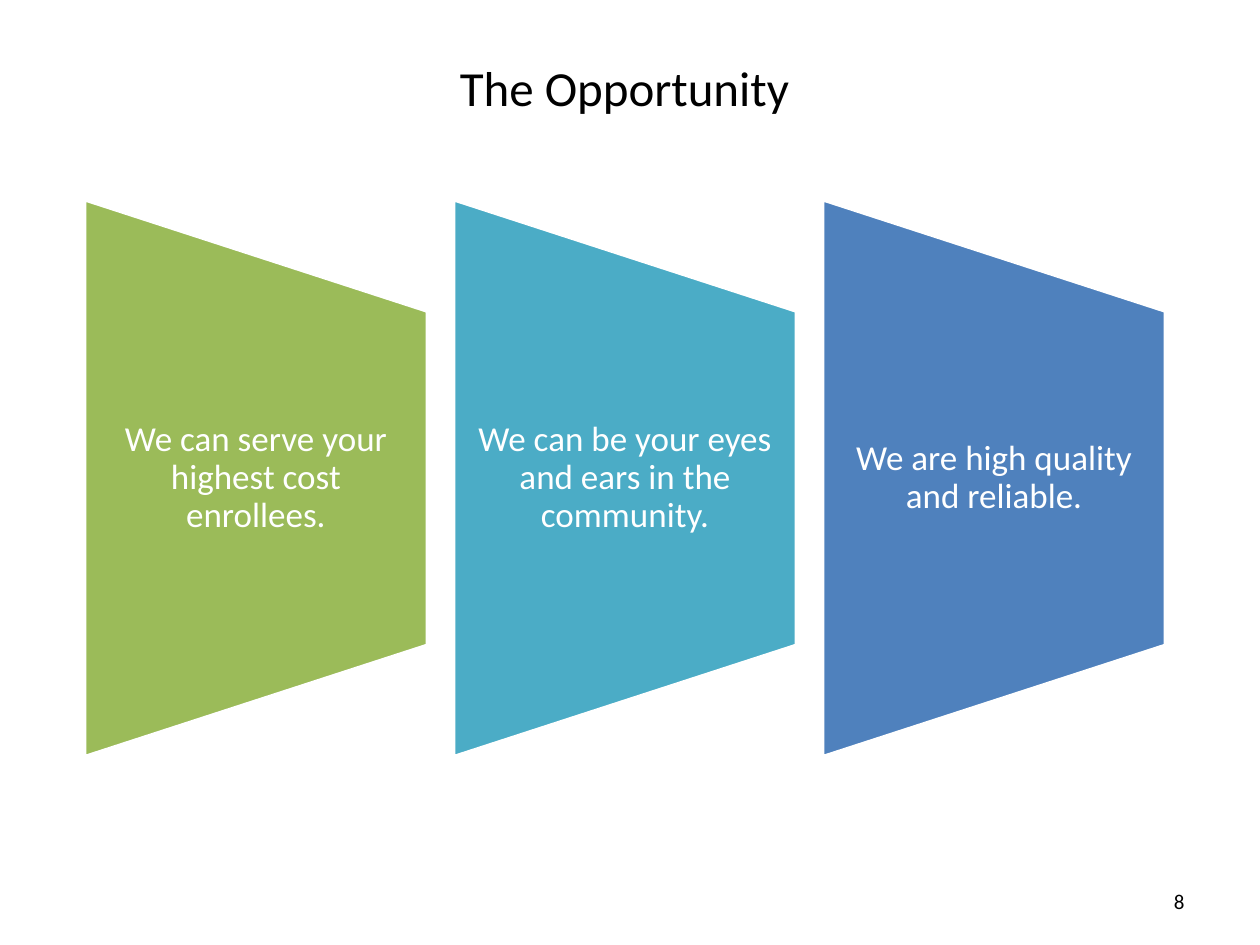
from dataclasses import dataclass

from pptx import Presentation
from pptx.dml.color import RGBColor
from pptx.enum.shapes import MSO_SHAPE
from pptx.enum.text import MSO_ANCHOR, PP_ALIGN
from pptx.util import Cm, Pt

TRAPEZOID = MSO_SHAPE.FLOWCHART_MANUAL_OPERATION
MIDDLE = MSO_ANCHOR.MIDDLE
CENTER, RIGHT = PP_ALIGN.CENTER, PP_ALIGN.RIGHT

FONT = "Calibri"
BLACK, WHITE = "000000", "FFFFFF"

# Panel geometry in centimetres; the trapezoids stand on their side
PANEL_LENGTH, PANEL_WIDTH = 11.23, 6.91
FIRST_CENTER, CENTER_STEP, CENTER_Y = 5.16, 7.44, 9.64
TEXT_HEIGHT, TEXT_INSET = 6.74, 0.36


@dataclass
class Panel:
    text: str
    fill: str


PANELS = [
    Panel("We can serve your highest cost enrollees.", "9BBB59"),
    Panel("We can be your eyes and ears in the community.", "4BACC6"),
    Panel("We are high quality and reliable.", "4F81BD"),
]


def color(value: str) -> RGBColor:
    return RGBColor.from_string(value)


def add_text(page, left: float, top: float, width: float, height: float,
             text: str, size: int, ink: str, align=CENTER,
             line_spacing: float = 1.0):
    box = page.shapes.add_textbox(Cm(left), Cm(top), Cm(width), Cm(height))
    frame = box.text_frame
    frame.word_wrap = True
    frame.vertical_anchor = MIDDLE
    para = frame.paragraphs[0]
    para.alignment = align
    para.line_spacing = line_spacing
    span = para.add_run()
    span.text = text
    span.font.name = FONT
    span.font.size = Pt(size)
    span.font.color.rgb = color(ink)
    return frame


def add_panel(page, panel: Panel, center_x: float) -> None:
    shape = page.shapes.add_shape(
        TRAPEZOID,
        Cm(center_x - PANEL_LENGTH / 2), Cm(CENTER_Y - PANEL_WIDTH / 2),
        Cm(PANEL_LENGTH), Cm(PANEL_WIDTH))
    shape.rotation = 270
    shape.shadow.inherit = False
    shape.fill.solid()
    shape.fill.fore_color.rgb = color(panel.fill)
    shape.line.color.rgb = color(WHITE)
    shape.line.width = Pt(2)

    # Upright label over the rotated trapezoid
    frame = add_text(page, center_x - PANEL_WIDTH / 2,
                     CENTER_Y - TEXT_HEIGHT / 2, PANEL_WIDTH, TEXT_HEIGHT,
                     panel.text, 20, WHITE, line_spacing=0.9)
    frame.margin_left = frame.margin_right = Cm(TEXT_INSET)
    frame.margin_top = frame.margin_bottom = 0


def main() -> None:
    deck = Presentation()
    deck.slide_width, deck.slide_height = Cm(25.4), Cm(19.05)
    page = deck.slides.add_slide(deck.slide_layouts[6])

    # Title and page number
    add_text(page, 1.27, 0.76, 22.86, 1.98, "The Opportunity ", 28, BLACK)
    add_text(page, 18.2, 17.66, 5.93, 1.01, "8", 12, BLACK, RIGHT)

    # Three equally spaced panels
    for index, panel in enumerate(PANELS):
        add_panel(page, panel, FIRST_CENTER + index * CENTER_STEP)

    deck.save("out.pptx")


if __name__ == "__main__":
    main()
